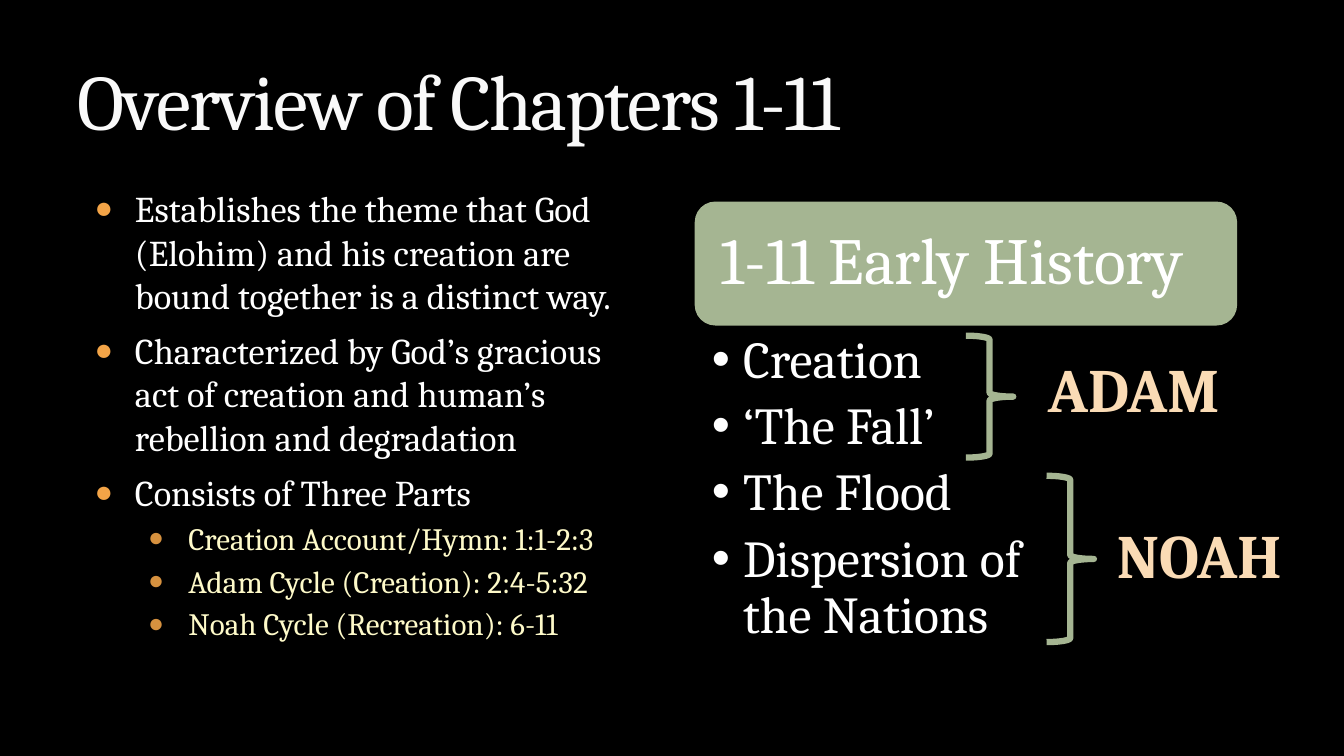
import pptx
import pptx.dml.color
import pptx.enum.shapes
import pptx.enum.text
import pptx.oxml
import pptx.util
from lxml import etree

Inches, Pt = pptx.util.Inches, pptx.util.Pt
SHAPE = pptx.enum.shapes.MSO_SHAPE
ALIGN = pptx.enum.text.PP_ALIGN
ANCHOR = pptx.enum.text.MSO_ANCHOR
FONT = "Cambria"
GREEN, PEACH, CREAM, WHITE = "A5B592", "FADBB5", "FEFAC9", "FFFFFF"
ORANGE, DARK_ORANGE = "F3A447", "D6913F"


def rgb(value):
    return pptx.dml.color.RGBColor.from_string(value)


def write(tf, text, size, color=WHITE, bold=False, align=ALIGN.LEFT, level=0,
          bullet=None, bullet_color=WHITE, bullet_size=100, margin=0, hang=0,
          before=0, after=0, spacing=1.0):
    """Fill the empty first paragraph, or add one after it."""
    first = not tf.text
    p = tf.paragraphs[0] if first else tf.add_paragraph()
    p.level = level
    if bullet:
        pPr = p._p.get_or_add_pPr()
        pPr.set("marL", str(Inches(margin)))
        pPr.set("indent", str(-Inches(hang)))
        clr = etree.SubElement(pPr, pptx.oxml.ns.qn("a:buClr"))
        etree.SubElement(clr, pptx.oxml.ns.qn("a:srgbClr"), val=bullet_color)
        etree.SubElement(pPr, pptx.oxml.ns.qn("a:buSzPct"), val=str(bullet_size * 1000))
        etree.SubElement(pPr, pptx.oxml.ns.qn("a:buFont"), typeface="Arial")
        etree.SubElement(pPr, pptx.oxml.ns.qn("a:buChar"), char=bullet)
    p.alignment = align
    p.line_spacing = spacing
    p.space_before = Pt(0 if first else before)
    p.space_after = Pt(after)
    p.text = text
    for r in p.runs:
        r.font.name, r.font.size, r.font.bold = FONT, Pt(size), bold
        r.font.color.rgb = rgb(color)
    return p


prs = pptx.Presentation()
prs.slide_width, prs.slide_height = Inches(13.33), Inches(7.5)
s = prs.slides.add_slide(prs.slide_layouts[5])
s.background.fill.solid()
s.background.fill.fore_color.rgb = rgb("000000")

# Title
title = s.shapes.title
title.left, title.top, title.width, title.height = map(Inches, (0.67, 0.17, 12, 1.33))
tf = title.text_frame
tf.auto_size = pptx.enum.text.MSO_AUTO_SIZE.NONE
tf.vertical_anchor = ANCHOR.BOTTOM
p = write(tf, "Overview of Chapters 1-11", 56, "F9F9F9")
p.runs[0].font._element.set("spc", "-130")

# Left column: points and the three parts
tf = s.shapes.add_textbox(*map(Inches, (0.84, 1.8, 5.38, 5))).text_frame
tf.word_wrap = True
for point in (
    "Establishes the theme that God (Elohim) and his creation are bound together is a distinct way.",
    "Characterized by God’s gracious act of creation and human’s rebellion and degradation",
    "Consists of Three Parts",
):
    write(tf, point, 25.9, bullet="●", bullet_color=ORANGE, bullet_size=85,
          margin=0.4, hang=0.4, before=8)
for part in (
    "Creation Account/Hymn: 1:1-2:3",
    "Adam Cycle (Creation): 2:4-5:32",
    "Noah Cycle (Recreation): 6-11",
):
    write(tf, part, 22.2, CREAM, level=1, bullet="●", bullet_color=DARK_ORANGE,
          bullet_size=85, margin=0.93, hang=0.4, before=4)

# Right column: banner
banner = s.shapes.add_shape(SHAPE.ROUNDED_RECTANGLE, *map(Inches, (6.89, 2, 5.38, 1.23)))
banner.shadow.inherit = False
banner.fill.solid()
banner.fill.fore_color.rgb = rgb(GREEN)
banner.line.fill.background()
tf = banner.text_frame
tf.word_wrap = True
tf.vertical_anchor = ANCHOR.MIDDLE
tf.margin_left = tf.margin_right = Inches(0.2)
write(tf, "1-11 Early History", 47, spacing=0.9)

# Right column: events
tf = s.shapes.add_textbox(*map(Inches, (6.89, 3.24, 5.38, 3.35))).text_frame
tf.word_wrap = True
tf.margin_left, tf.margin_right = Inches(0.17), Inches(0.37)
tf.margin_top = tf.margin_bottom = Inches(0.07)
for event in ("Creation", "‘The Fall’", "The Flood", "Dispersion of\vthe Nations"):
    write(tf, event, 37, level=1, bullet="•", margin=0.31, hang=0.31,
          after=7.4, spacing=0.9)

# Braces and the cycles they mark
for name, brace_box, label_box in (
    ("ADAM", (9.58, 3.33, 0.47, 1.21), (10.21, 3.43, 2.07, 0.84)),
    ("NOAH", (10.38, 4.72, 0.47, 1.65), (10.85, 5.08, 2.09, 0.84)),
):
    brace = s.shapes.add_shape(SHAPE.RIGHT_BRACE, *map(Inches, brace_box))
    brace.shadow.inherit = False
    brace.fill.background()
    brace.line.color.rgb = rgb(GREEN)
    brace.line.width = Pt(4.5)
    tf = s.shapes.add_textbox(*map(Inches, label_box)).text_frame
    tf.word_wrap = False
    write(tf, name, 44, PEACH, bold=True, align=ALIGN.CENTER)

prs.save("out.pptx")
